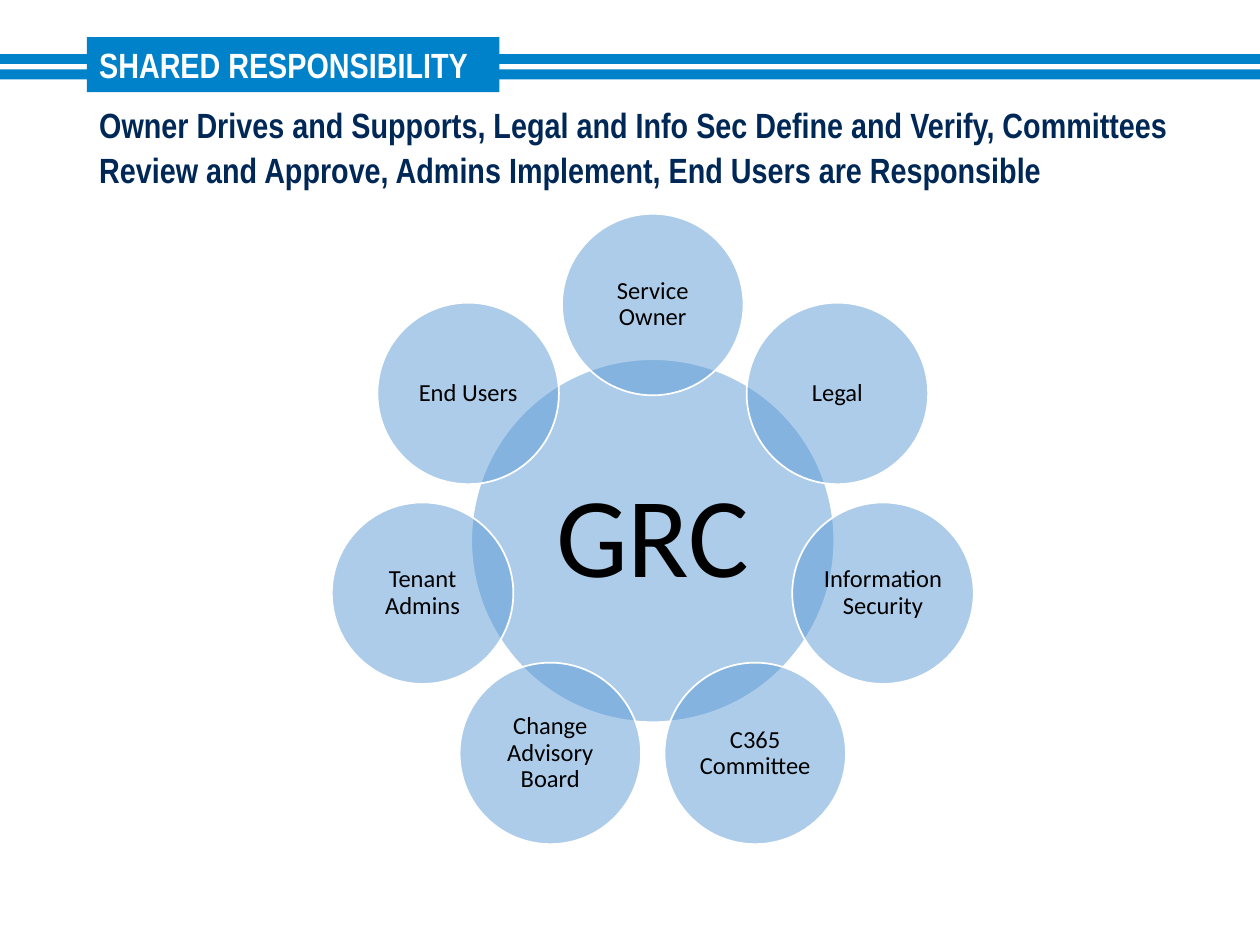
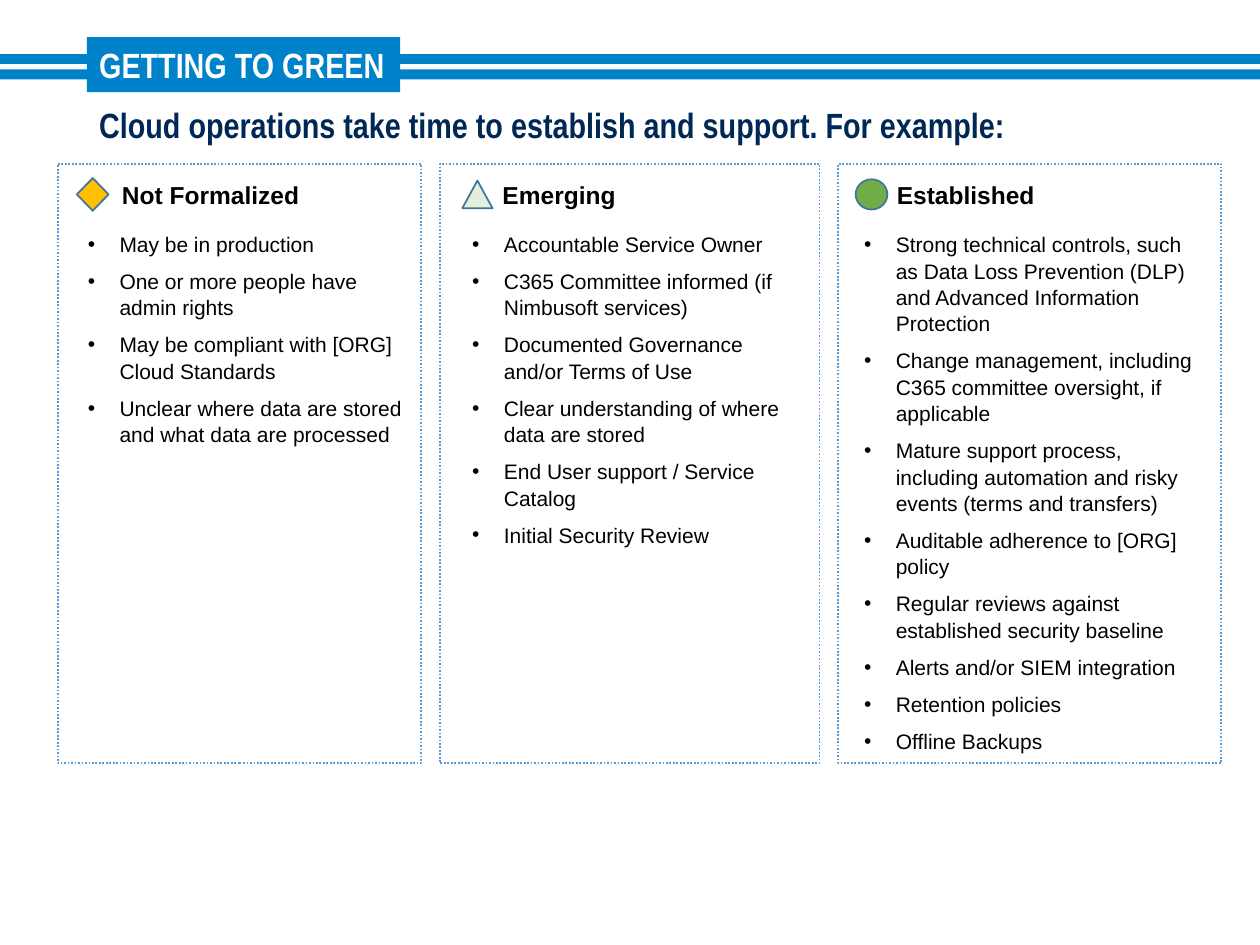
from dataclasses import dataclass
from math import cos, pi, sin

from lxml.etree import SubElement
from pptx import Presentation
from pptx.dml.color import RGBColor
from pptx.enum.dml import MSO_LINE
from pptx.enum.shapes import MSO_SHAPE
from pptx.enum.text import MSO_ANCHOR, PP_ALIGN
from pptx.oxml.ns import qn
from pptx.shapes.autoshape import Shape
from pptx.slide import Slide
from pptx.util import Cm, Pt

BLUE = RGBColor(0x00, 0x82, 0xCA)
NAVY = RGBColor(0x00, 0x28, 0x56)
SKY = RGBColor(0x5B, 0x9B, 0xD5)
STEEL = RGBColor(0x43, 0x73, 0x9E)
AMBER = RGBColor(0xFF, 0xC0, 0x00)
MINT = RGBColor(0xE2, 0xF0, 0xD9)
GREEN = RGBColor(0x70, 0xAD, 0x47)
WHITE = RGBColor(0xFF, 0xFF, 0xFF)
BLACK = RGBColor(0x00, 0x00, 0x00)

WIDTH, HEIGHT = 25.4, 19.05
LEFT = 1.75
SPACING = 1.05


@dataclass
class Box:
    left: float
    top: float
    width: float
    height: float


@dataclass
class Style:
    font: str
    size: float
    color: RGBColor = BLACK
    bold: bool = False
    align: PP_ALIGN = PP_ALIGN.LEFT
    spacing: float = 1.0
    before: float = 0


@dataclass
class Stage:
    name: str
    width: float
    mark: MSO_SHAPE
    fill: RGBColor
    mark_box: tuple[float, float]
    mark_left: float
    name_left: float
    list_left: float
    list_width: float
    items: list[str]


TITLE = Style("Arial Narrow", 20, WHITE, True)
LEAD = Style("Arial Narrow", 20, NAVY, True, spacing=SPACING, before=6)
HEAD = Style("Arial", 14, bold=True)
ITEM = Style("Arial", 12, spacing=SPACING, before=6)
HUB = Style("Calibri", 65, align=PP_ALIGN.CENTER, spacing=0.9)
ROLE = Style("Calibri", 14, align=PP_ALIGN.CENTER, spacing=0.9)

ROLES = ["Service Owner", "Legal", "Information Security", "C365 Committee",
         "Change Advisory Board", "Tenant Admins", "End Users"]

STAGES = [
    Stage("Not Formalized", 7.32, MSO_SHAPE.DIAMOND, AMBER, (0.64, 0.66),
          0.38, 1.04, 0.35, 6.93, [
              "May be in production",
              "One or more people have admin rights",
              "May be compliant with [ORG] Cloud Standards",
              "Unclear where data are stored and what data are processed",
          ]),
    Stage("Emerging", 7.65, MSO_SHAPE.ISOSCELES_TRIANGLE, MINT, (0.61, 0.56),
          0.45, 1.01, 0.4, 6.83, [
              "Accountable Service Owner",
              "C365 Committee informed (if Nimbusoft services)",
              "Documented Governance and/or Terms of Use",
              "Clear understanding of where data are stored",
              "End User support / Service Catalog",
              "Initial Security Review",
          ]),
    Stage("Established", 7.72, MSO_SHAPE.OVAL, GREEN, (0.64, 0.61),
          0.35, 0.93, 0.27, 7.46, [
              "Strong technical controls, such as Data Loss Prevention (DLP) "
              "and Advanced Information Protection",
              "Change management, including C365 committee oversight, "
              "if applicable",
              "Mature support process, including automation and "
              "risky events (terms and transfers)",
              "Auditable adherence to [ORG]  policy",
              "Regular reviews against established security baseline",
              "Alerts and/or SIEM integration",
              "Retention policies",
              "Offline Backups",
          ]),
]


def place(box: Box) -> tuple[Cm, Cm, Cm, Cm]:
    return Cm(box.left), Cm(box.top), Cm(box.width), Cm(box.height)


def add_form(slide: Slide, kind: MSO_SHAPE, box: Box,
             fill: RGBColor | None = None,
             line: RGBColor | None = None) -> Shape:
    form = slide.shapes.add_shape(kind, *place(box))
    form.shadow.inherit = False
    if fill is None:
        form.fill.background()
    else:
        form.fill.solid()
        form.fill.fore_color.rgb = fill
    if line is None:
        form.line.fill.background()
    else:
        form.line.color.rgb = line
        form.line.width = Pt(1)
    return form


def write(form: Shape, lines: list[str], style: Style) -> None:
    frame = form.text_frame
    frame.word_wrap = True
    for index, line in enumerate(lines):
        para = frame.add_paragraph() if index else frame.paragraphs[0]
        para.text = line
        para.alignment = style.align
        para.line_spacing = style.spacing
        para.space_before = Pt(style.before)
        para.font.name = style.font
        para.font.size = Pt(style.size)
        para.font.bold = style.bold
        para.font.color.rgb = style.color


def add_text(slide: Slide, box: Box, lines: list[str], style: Style) -> Shape:
    form = slide.shapes.add_textbox(*place(box))
    write(form, lines, style)
    return form


def add_bullets(form: Shape) -> None:
    for para in form.text_frame.paragraphs:
        props = para._p.get_or_add_pPr()
        props.set("marL", str(Cm(0.64)))
        props.set("indent", str(-Cm(0.64)))
        SubElement(props, qn("a:buFont")).set("typeface", "Arial")
        SubElement(props, qn("a:buChar")).set("char", "•")


def add_page(deck: Presentation, title: str, width: float, lead: str) -> Slide:
    """Start a slide with the twin bands, the title tab and the lead text."""
    slide = deck.slides.add_slide(deck.slide_layouts[6])
    for top in (1.09, 1.4):
        add_form(slide, MSO_SHAPE.RECTANGLE, Box(0, top, WIDTH, 0.2), BLUE)
    tab = add_form(slide, MSO_SHAPE.RECTANGLE,
                   Box(LEFT, 0.75, width, 1.11), BLUE)
    write(tab, [title], TITLE)
    tab.text_frame.vertical_anchor = MSO_ANCHOR.MIDDLE
    tab.text_frame.margin_right = 0
    add_text(slide, Box(LEFT, 1.93, 22.45, 1.98), [lead], LEAD)
    return slide


def add_disc(slide: Slide, x: float, y: float, size: float,
             label: str, style: Style, inset: float) -> None:
    """Draw a half-clear labelled circle centred on x, y."""
    box = Box(x - size / 2, y - size / 2, size, size)
    disc = add_form(slide, MSO_SHAPE.OVAL, box, SKY, WHITE)
    color = disc.fill._xPr.find(qn("a:solidFill"))[0]
    SubElement(color, qn("a:alpha")).set("val", "50000")
    write(disc, [label], style)
    frame = disc.text_frame
    frame.vertical_anchor = MSO_ANCHOR.MIDDLE
    frame.margin_left = frame.margin_right = Cm(inset)
    frame.margin_top = frame.margin_bottom = Cm(inset)


def add_wheel(slide: Slide) -> None:
    x, y, orbit, size = 13.16, 10.9, 4.76, 3.66
    add_disc(slide, x, y, 2 * size, "GRC", HUB, 0.23)
    for index, role in enumerate(ROLES):
        turn = 2 * pi * index / len(ROLES)
        add_disc(slide, x + orbit * sin(turn), y - orbit * cos(turn),
                 size, role, ROLE, 0.05)


def add_stage(slide: Slide, stage: Stage, left: float) -> None:
    panel = add_form(slide, MSO_SHAPE.RECTANGLE,
                     Box(left, 3.3, stage.width, 12.09), line=SKY)
    panel.line.dash_style = MSO_LINE.ROUND_DOT
    wide, high = stage.mark_box
    add_form(slide, stage.mark,
             Box(left + stage.mark_left, 3.92 - high / 2, wide, high),
             stage.fill, STEEL)
    add_text(slide, Box(left + stage.name_left, 3.51, 6.1, 0.86),
             [stage.name], HEAD)
    items = add_text(slide, Box(left + stage.list_left, 4.52,
                                stage.list_width, 10.8), stage.items, ITEM)
    add_bullets(items)


def main() -> None:
    deck = Presentation()
    deck.slide_width, deck.slide_height = Cm(WIDTH), Cm(HEIGHT)

    shared = add_page(
        deck, "SHARED RESPONSIBILITY", 8.32,
        "Owner Drives and Supports, Legal and Info Sec Define and Verify, "
        "Committees Review and Approve, Admins Implement, "
        "End Users are Responsible")
    add_wheel(shared)

    green = add_page(
        deck, "GETTING TO GREEN", 6.32,
        "Cloud operations take time to establish and support. For example:")
    left, gap = 1.17, 0.38
    for stage in STAGES:
        add_stage(green, stage, left)
        left += stage.width + gap

    deck.save("out.pptx")


if __name__ == "__main__":
    main()
